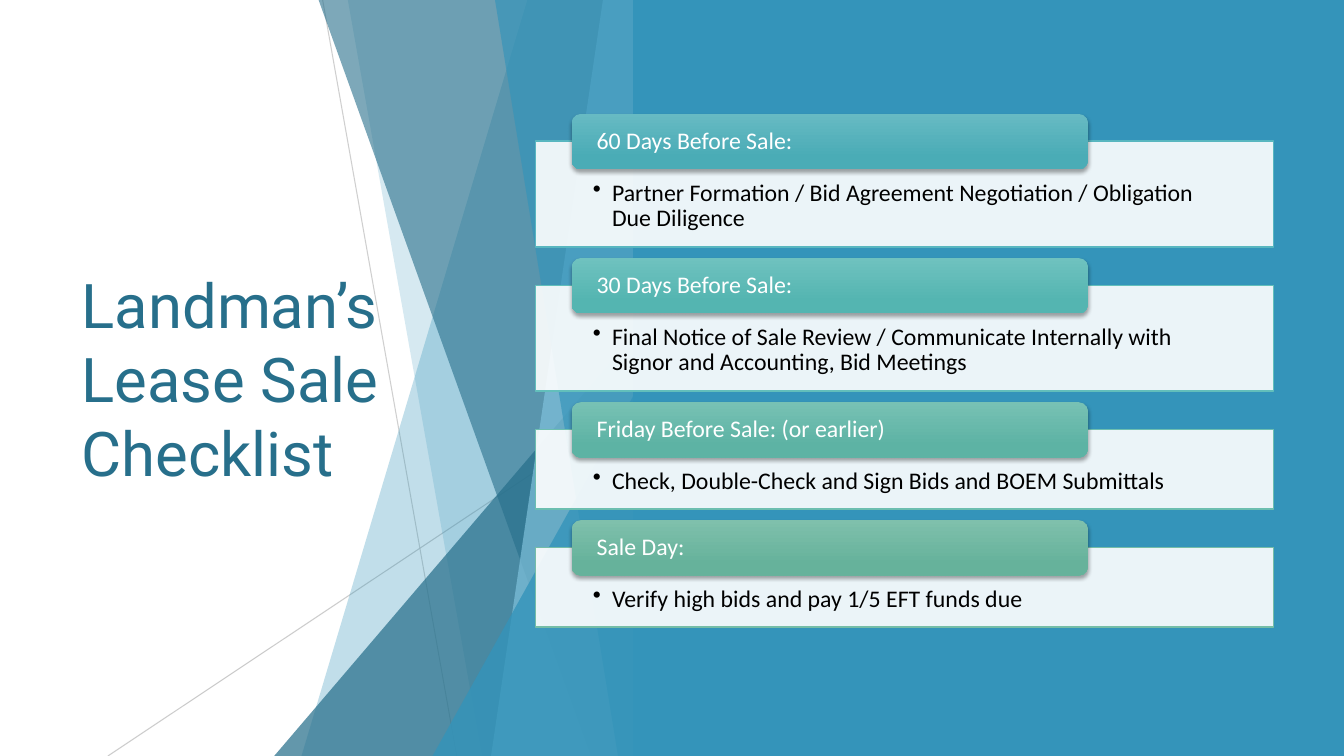
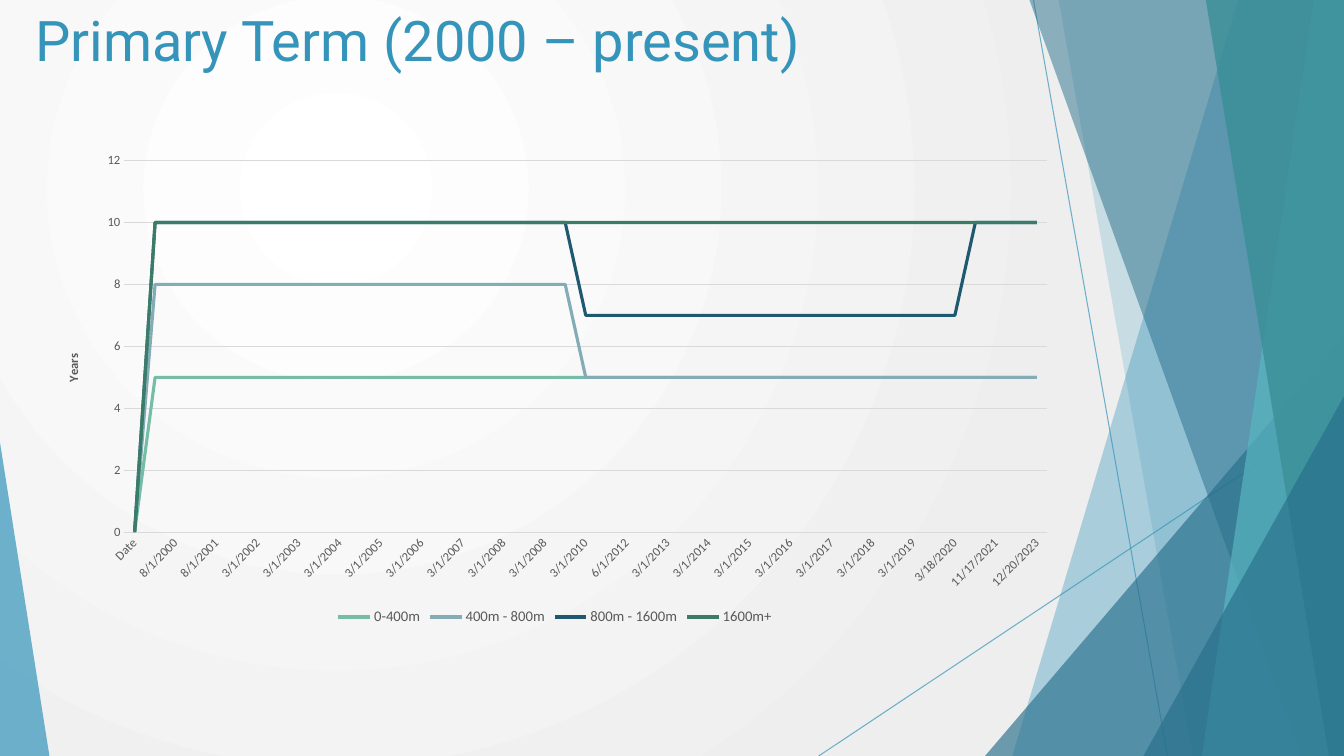
from lxml.etree import SubElement
from pptx import Presentation
from pptx.chart.data import CategoryChartData
from pptx.dml.color import RGBColor
from pptx.enum.chart import XL_CHART_TYPE, XL_LEGEND_POSITION, XL_TICK_MARK
from pptx.enum.shapes import MSO_CONNECTOR, MSO_SHAPE
from pptx.enum.text import MSO_ANCHOR, MSO_AUTO_SIZE, PP_ALIGN
from pptx.oxml.ns import qn
from pptx.util import Inches, Pt

WIDTH, HEIGHT = 13.33, 7.5
TITLE_FONT, BODY_FONT = "Roboto", "Calibri"

rgb = RGBColor.from_string
WHITE, BLACK = rgb("FFFFFF"), rgb("000000")
BLUE, DEEP_BLUE, SKY = rgb("3494BA"), rgb("276F8B"), rgb("7FC1DB")
AQUA, TEAL = rgb("58B6C0"), rgb("3A8F98")
SILVER, GRID, GREY, PALE = rgb("BFBFBF"), rgb("D9D9D9"), rgb("595959"), rgb("EEEEEE")

# Decoration, measured against the right edge of the slide
RAYS = [(10.25, 0, 11.58, HEIGHT), (WIDTH, 4.03, 8.12, HEIGHT)]
FACETS = [  # wedge: top x, bottom x; triangle: left, top
    ("wedge", 12.28, 10.04),
    ("wedge", 10.5, 11.83),
    ("triangle", 9.77, 3.33),
    ("wedge", 10.21, 12.91),
    ("wedge", 13.03, 11.92),
    ("wedge", 11.96, 13.18),
    ("triangle", 11.34, 3.93),
]
CHECKLIST_FACETS = dict(
    rays=[(SILVER, 75), (SILVER, 80)],
    fills=[(BLUE, 30), (BLUE, 20), (DEEP_BLUE, 72), (DEEP_BLUE, 60),
           (SKY, 70), (BLUE, 65), (BLUE, 80)])
CHART_FACETS = dict(
    rays=[(BLUE, 70), (BLUE, 70)],
    fills=[(BLUE, 36), (BLUE, 20), (DEEP_BLUE, 66), (DEEP_BLUE, 50),
           (AQUA, 70), (TEAL, 80), (DEEP_BLUE, 66)])

CHECKLIST_TITLE = "Landman’s Lease Sale Checklist"
CHECKLIST = [  # heading, task, lines of task, outline, gradient from and to
    ("60 Days Before Sale:",
     "Partner Formation / Bid Agreement Negotiation / Obligation Due Diligence",
     2, AQUA, rgb("67BAC3"), rgb("4AACB6")),
    ("30 Days Before Sale:",
     "Final Notice of Sale Review / Communicate Internally with Signor and "
     "Accounting, Bid Meetings",
     2, rgb("62BFBB"), rgb("6FC2BF"), rgb("54B5B1")),
    ("Friday Before Sale: (or earlier)",
     "Check, Double-Check and Sign Bids and BOEM Submittals",
     1, rgb("6CBEB0"), rgb("77C1B4"), rgb("5DB3A4")),
    ("Sale Day:", "Verify high bids and pay 1/5 EFT funds due",
     1, rgb("75BDA7"), rgb("7FC0AC"), rgb("66B29B")),
]

TERM_TITLE = "Primary Term (2000 – present)"
SALE_DATES = """
Date 3/1/2000 8/1/2000 3/1/2001 8/1/2001 8/1/2001 3/1/2002 8/1/2002 3/1/2003
8/1/2003 3/1/2004 8/1/2004 3/1/2005 8/1/2005 3/1/2006 8/1/2006 3/1/2007
8/1/2007 3/1/2008 8/1/2008 3/1/2008 8/1/2009 3/1/2010 12/14/2011 6/1/2012
11/1/2012 3/1/2013 8/1/2013 3/1/2014 8/1/2014 3/1/2015 8/1/2015 3/1/2016
8/1/2016 3/1/2017 8/1/2017 3/1/2018 8/1/2018 3/1/2019 8/1/2019 3/18/2020
11/18/2020 11/17/2021 3/29/2023 12/20/2023
""".split()
TERMS = [  # depth, line colour, (years, number of sales)
    ("0-400m", rgb("75BDA7"), [(0, 1), (5, 44)]),
    ("400m - 800m", rgb("84ACB6"), [(0, 1), (8, 21), (5, 23)]),
    ("800m - 1600m", rgb("1F5970"), [(0, 1), (10, 21), (7, 19), (10, 4)]),
    ("1600m+", rgb("3B7C68"), [(0, 1), (10, 44)]),
]


def box(*lengths):
    return [Inches(v) for v in lengths]


def set_alpha(shape, percent):
    """Set the opacity of the first colour of a shape."""
    color = next(shape.element.spPr.iter(qn("a:srgbClr")))
    SubElement(color, qn("a:alpha"), val=str(percent * 1000))


def paint(shape, color, alpha=100, outline=None):
    shape.shadow.inherit = False
    shape.fill.solid()
    shape.fill.fore_color.rgb = color
    if outline is None:
        shape.line.fill.background()
    else:
        shape.line.color.rgb = outline
        shape.line.width = Pt(1)
    if alpha < 100:
        set_alpha(shape, alpha)
    return shape


def style_font(font, size, color, name=BODY_FONT, bold=False):
    font.size, font.name, font.bold = Pt(size), name, bold
    font.color.rgb = color


def write(shape, text, size, color, font=BODY_FONT, anchor=MSO_ANCHOR.TOP,
          insets=(0.1, 0.05, 0.1, 0.05), spacing=None, bullet=None):
    tf = shape.text_frame
    tf.word_wrap = True
    tf.auto_size = MSO_AUTO_SIZE.NONE
    tf.vertical_anchor = anchor
    tf.margin_left, tf.margin_top, tf.margin_right, tf.margin_bottom = box(*insets)
    p = tf.paragraphs[0]
    p.alignment = PP_ALIGN.LEFT
    if bullet:
        pPr = p._p.get_or_add_pPr()
        pPr.set("marL", str(Inches(0.19)))
        pPr.set("indent", str(-Inches(0.19)))
        SubElement(pPr, qn("a:buChar"), char=bullet)
    if spacing:
        p.line_spacing = spacing
    r = p.add_run()
    r.text = text
    style_font(r.font, size, color, font)


def add_rect(s, bounds, color, **look):
    return paint(s.shapes.add_shape(MSO_SHAPE.RECTANGLE, *box(*bounds)), color, **look)


def add_triangle(s, left, top, right, apex, color, alpha):
    sp = s.shapes.add_shape(MSO_SHAPE.ISOSCELES_TRIANGLE,
                            *box(left, top, right - left, HEIGHT - top))
    sp.adjustments[0] = apex
    paint(sp, color, alpha)


def add_facets(s, right, rays, fills):
    """Draw the facet band so that it ends at the given right edge."""
    dx = right - WIDTH
    for (x1, y1, x2, y2), (color, alpha) in zip(RAYS, rays):
        ray = s.shapes.add_connector(MSO_CONNECTOR.STRAIGHT,
                                     *box(x1 + dx, y1, x2 + dx, y2))
        ray.line.color.rgb = color
        ray.line.width = Pt(0.75)
        set_alpha(ray, alpha)
        SubElement(ray.element.spPr, qn("a:effectLst"))
    for (kind, a, b), (color, alpha) in zip(FACETS, fills):
        if kind == "triangle":
            add_triangle(s, a + dx, b, right, 1, color, alpha)
        else:
            outline = s.shapes.build_freeform(*box(a + dx, 0))
            outline.add_line_segments([box(right, 0), box(right, HEIGHT),
                                       box(b + dx, HEIGHT)])
            paint(outline.convert_to_shape(), color, alpha)


def set_title(s, text, bounds, size, color, anchor=MSO_ANCHOR.TOP):
    title = s.shapes.title
    title.left, title.top, title.width, title.height = box(*bounds)
    write(title, text, size, color, font=TITLE_FONT, anchor=anchor)
    title.element.getparent().append(title.element)  # in front of the facets


def set_gradient(fill, *stops):
    fill.gradient()
    for stop, (position, color) in zip(fill.gradient_stops, stops):
        stop.position = position
        stop.color.rgb = color


def add_heading_bar(s, text, bounds, start, end):
    bar = paint(s.shapes.add_shape(MSO_SHAPE.ROUNDED_RECTANGLE, *box(*bounds)), end)
    set_gradient(bar.fill, (0, start), (0.78, end))
    bar.fill.gradient_angle = 270
    shadow = SubElement(bar.element.spPr.find(qn("a:effectLst")), qn("a:outerShdw"),
                        blurRad=str(Pt(3)), dist=str(Pt(2)), dir="5400000",
                        rotWithShape="0")
    black = SubElement(shadow, qn("a:srgbClr"), val=str(BLACK))
    SubElement(black, qn("a:alpha"), val="35000")
    write(bar, text, 17, WHITE, anchor=MSO_ANCHOR.MIDDLE,
          insets=(0.22, 0, 0.22, 0), spacing=0.9)


def build_checklist(prs):
    s = prs.slides.add_slide(prs.slide_layouts[5])
    split = 6.28
    add_facets(s, split, **CHECKLIST_FACETS)
    set_title(s, CHECKLIST_TITLE, (0.71, 1.51, 3.88, 4.48), 44, DEEP_BLUE,
              MSO_ANCHOR.MIDDLE)
    add_rect(s, (split, 0, WIDTH - split, HEIGHT), BLUE)
    top = 1.4
    for heading, task, lines, outline, start, end in CHECKLIST:
        height = 0.53 + 0.26 * lines
        panel = add_rect(s, (5.31, top, 7.32, height), WHITE, alpha=90,
                         outline=outline)
        write(panel, task, 17, BLACK, insets=(0.57, 0.39, 0.57, 0.13),
              spacing=0.9, bullet="•")
        add_heading_bar(s, heading, (5.67, top - 0.27, 5.12, 0.55), start, end)
        top += height + 0.38


def set_radial_background(s):
    fill = s.background.fill
    set_gradient(fill, (0, WHITE), (1, PALE))
    gradient = next(s.element.iter(qn("a:gradFill")))
    gradient.remove(gradient.find(qn("a:lin")))
    circle = SubElement(gradient, qn("a:path"), path="circle")
    SubElement(circle, qn("a:fillToRect"), l="50000", t="50000", r="100000", b="100000")


def set_layout(parent, index, inner=False, **fractions):
    """Place a chart part by fractions of the chart's size."""
    layout = parent.find(qn("c:layout"))
    if layout is None:
        layout = SubElement(parent, qn("c:layout"))
        parent.insert(index, layout)
    manual = SubElement(layout, qn("c:manualLayout"))
    if inner:
        SubElement(manual, qn("c:layoutTarget"), val="inner")
    for mode in ("xMode", "yMode"):
        SubElement(manual, qn("c:" + mode), val="edge")
    for name, value in fractions.items():
        SubElement(manual, qn("c:" + name), val=str(value))


def style_axes(chart):
    dates, years = chart.category_axis, chart.value_axis
    for axis in (dates, years):
        axis.major_tick_mark = axis.minor_tick_mark = XL_TICK_MARK.NONE
        style_font(axis.tick_labels.font, 9, GREY)
    dates.format.line.color.rgb = GRID
    dates.format.line.width = Pt(0.75)
    dates._element.find(qn("c:txPr")).find(qn("a:bodyPr")).set("rot", "-2700000")
    skip = SubElement(dates._element, qn("c:tickLblSkip"), val="2")
    dates._element.find(qn("c:noMultiLvlLbl")).addprevious(skip)

    years.minimum_scale, years.maximum_scale, years.major_unit = 0, 12, 2
    years.format.line.fill.background()
    years.major_gridlines.format.line.color.rgb = GRID
    years.major_gridlines.format.line.width = Pt(0.75)
    r = years.axis_title.text_frame.paragraphs[0].add_run()
    r.text = "Years"
    style_font(r.font, 9, GREY, bold=True)
    set_layout(years.axis_title._element, 1, x=0.02, y=0.43)


def add_term_chart(s):
    data = CategoryChartData()
    data.categories = SALE_DATES
    for depth, _, runs in TERMS:
        data.add_series(depth, [years for years, count in runs for _ in range(count)])
    chart = s.shapes.add_chart(XL_CHART_TYPE.LINE, *box(0.42, 1.4, 10.17, 4.85),
                               data).chart
    style_font(chart.font, 10, BLACK)
    chart.has_title = False
    chart.has_legend = True
    chart.legend.position = XL_LEGEND_POSITION.BOTTOM
    chart.legend.include_in_layout = False
    style_font(chart.legend.font, 10.5, GREY)
    plot = chart.plots[0]
    plot.vary_by_categories = False
    for series, (_, color, _) in zip(plot.series, TERMS):
        series.smooth = False
        series.format.line.color.rgb = color
        series.format.line.width = Pt(2.25)
    style_axes(chart)
    plot_area = next(chart.element.iter(qn("c:plotArea")))
    set_layout(plot_area, 0, inner=True, x=0.08, y=0.04, w=0.9, h=0.76)


def build_primary_term(prs):
    s = prs.slides.add_slide(prs.slide_layouts[5])
    set_radial_background(s)
    add_facets(s, WIDTH, **CHART_FACETS)
    add_triangle(s, 0, 4.39, 0.49, 0, BLUE, 70)
    set_title(s, TERM_TITLE, (0.25, 0, 9.4, 1.44), 40, BLUE)
    add_term_chart(s)


def main():
    prs = Presentation()
    prs.slide_width, prs.slide_height = box(WIDTH, HEIGHT)
    build_checklist(prs)
    build_primary_term(prs)
    prs.save("out.pptx")


if __name__ == "__main__":
    main()
